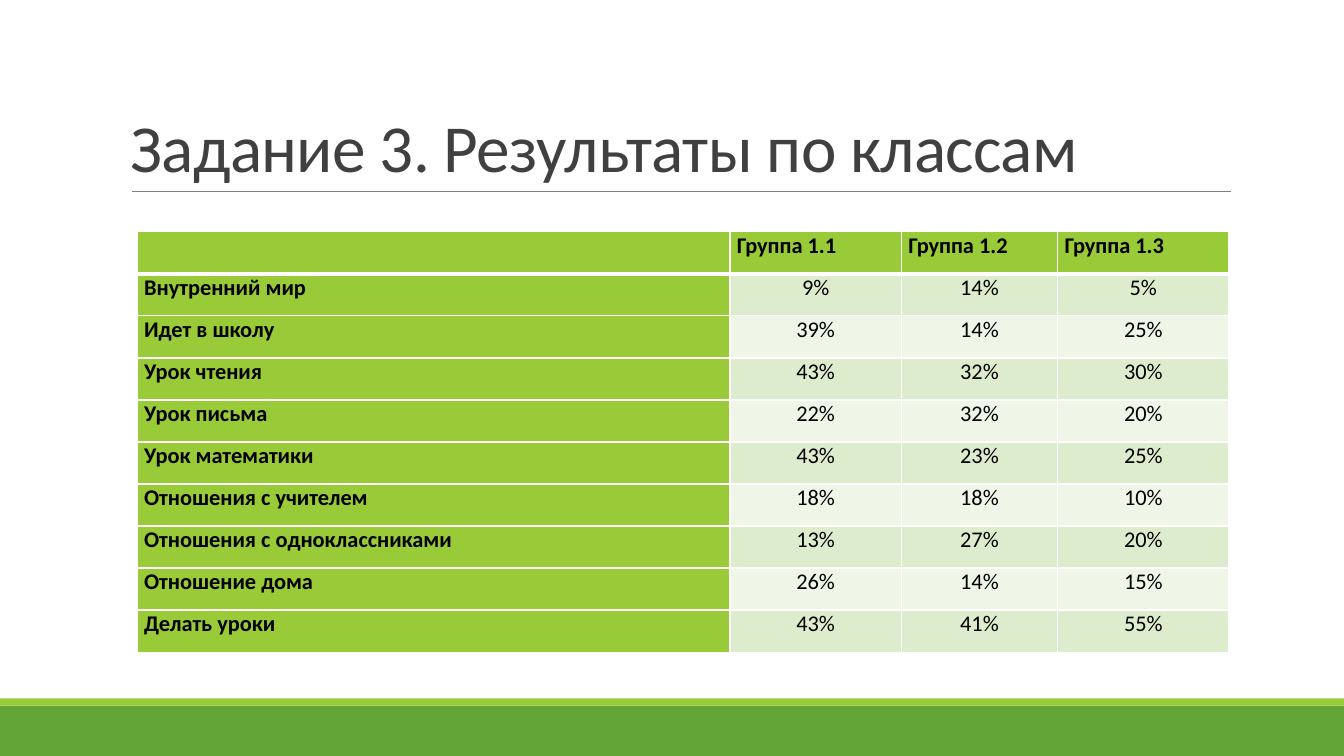
from dataclasses import dataclass

from lxml import etree
from pptx import Presentation
from pptx import util as u
from pptx.dml import color as dml
from pptx.enum import shapes, text
from pptx.oxml import ns

FONT = "Calibri"
LIME = "99CB38"
BANDS = ("DEECCE", "EFF6E8")
WIDTHS = (5.88, 1.7, 1.55, 1.7)
HEADS = ("", "Группа 1.1", "Группа 1.2", "Группа 1.3")


@dataclass
class Bar:
    top: float
    height: float
    fill: str


@dataclass
class Row:
    label: str
    shares: tuple[int, int, int]


BARS = (Bar(7, 0.5, "63A537"), Bar(6.93, 0.07, LIME))
ROWS = (
    Row("Внутренний мир", (9, 14, 5)),
    Row("Идет в школу", (39, 14, 25)),
    Row("Урок чтения", (43, 32, 30)),
    Row("Урок письма", (22, 32, 20)),
    Row("Урок математики", (43, 23, 25)),
    Row("Отношения с учителем", (18, 18, 10)),
    Row("Отношения с одноклассниками", (13, 27, 20)),
    Row("Отношение дома", (26, 14, 15)),
    Row("Делать уроки", (43, 41, 55)),
)


def paint(target, shade: str) -> None:
    target.solid()
    target.fore_color.rgb = dml.RGBColor.from_string(shade)


def style(par, size: float, shade: str, bold: bool = False) -> None:
    font = par.font
    font.name, font.size, font.bold = FONT, u.Pt(size), bold
    paint(font.fill, shade)


def add_bar(slide, bar: Bar) -> None:
    shape = slide.shapes.add_shape(
        shapes.MSO_SHAPE.RECTANGLE,
        0, u.Inches(bar.top), u.Inches(13.33), u.Inches(bar.height),
    )
    shape.shadow.inherit = False
    paint(shape.fill, bar.fill)
    shape.line.fill.background()


def add_rule(slide) -> None:
    rule = slide.shapes.add_connector(
        shapes.MSO_CONNECTOR.STRAIGHT,
        u.Inches(1.31), u.Inches(1.9), u.Inches(12.21), u.Inches(1.9),
    )
    paint(rule.line.fill, "808080")
    rule.line.width = u.Pt(0.5)
    etree.SubElement(rule._element.spPr, ns.qn("a:effectLst"))


def add_title(slide) -> None:
    box = slide.shapes.add_textbox(
        u.Inches(1.2), u.Inches(0.31), u.Inches(11), u.Inches(1.59)
    )
    frame = box.text_frame
    frame.word_wrap = True
    frame.vertical_anchor = text.MSO_ANCHOR.BOTTOM
    par = frame.paragraphs[0]
    par.line_spacing = 0.85
    run = par.add_run()
    run.text = "Задание 3. Результаты по классам"
    run._r.get_or_add_rPr().set("spc", "-50")
    style(par, 48, "404040")


def add_edges(cell, top: float, bottom: float) -> None:
    props = cell._tc.get_or_add_tcPr()
    edges = (("L", 1), ("R", 1), ("T", top), ("B", bottom))
    for place, (side, width) in enumerate(edges):
        line = etree.Element(ns.qn(f"a:ln{side}"), w=str(u.Pt(width)))
        fill = etree.SubElement(line, ns.qn("a:solidFill"))
        etree.SubElement(fill, ns.qn("a:srgbClr"), val="FFFFFF")
        props.insert(place, line)


def fill_cell(cell, words: str, row: int, col: int) -> None:
    head = row == 0 or col == 0
    cell.margin_left = cell.margin_right = u.Inches(0.07)
    cell.margin_top = cell.margin_bottom = 0
    paint(cell.fill, LIME if head else BANDS[(row - 1) % 2])
    add_edges(cell, 3 if row == 1 else 1, 3 if row == 0 else 1)
    cell.text = words
    par = cell.text_frame.paragraphs[0]
    par.alignment = text.PP_ALIGN.JUSTIFY if head else text.PP_ALIGN.CENTER
    style(par, 16, "000000", head)


def add_grid(slide) -> None:
    lines = [HEADS]
    lines += [(row.label, *(f"{share}%" for share in row.shares)) for row in ROWS]
    table = slide.shapes.add_table(
        len(lines), len(HEADS),
        u.Inches(1.36), u.Inches(2.3), u.Inches(sum(WIDTHS)), u.Inches(4.17),
    ).table
    for column, width in zip(table.columns, WIDTHS):
        column.width = u.Inches(width)
    for row, line in enumerate(lines):
        for col, words in enumerate(line):
            fill_cell(table.cell(row, col), words, row, col)


def main() -> None:
    deck = Presentation()
    deck.slide_width, deck.slide_height = u.Inches(13.33), u.Inches(7.5)
    slide = deck.slides.add_slide(deck.slide_layouts[6])
    for bar in BARS:
        add_bar(slide, bar)
    add_rule(slide)
    add_title(slide)
    add_grid(slide)
    deck.save("out.pptx")


if __name__ == "__main__":
    main()
